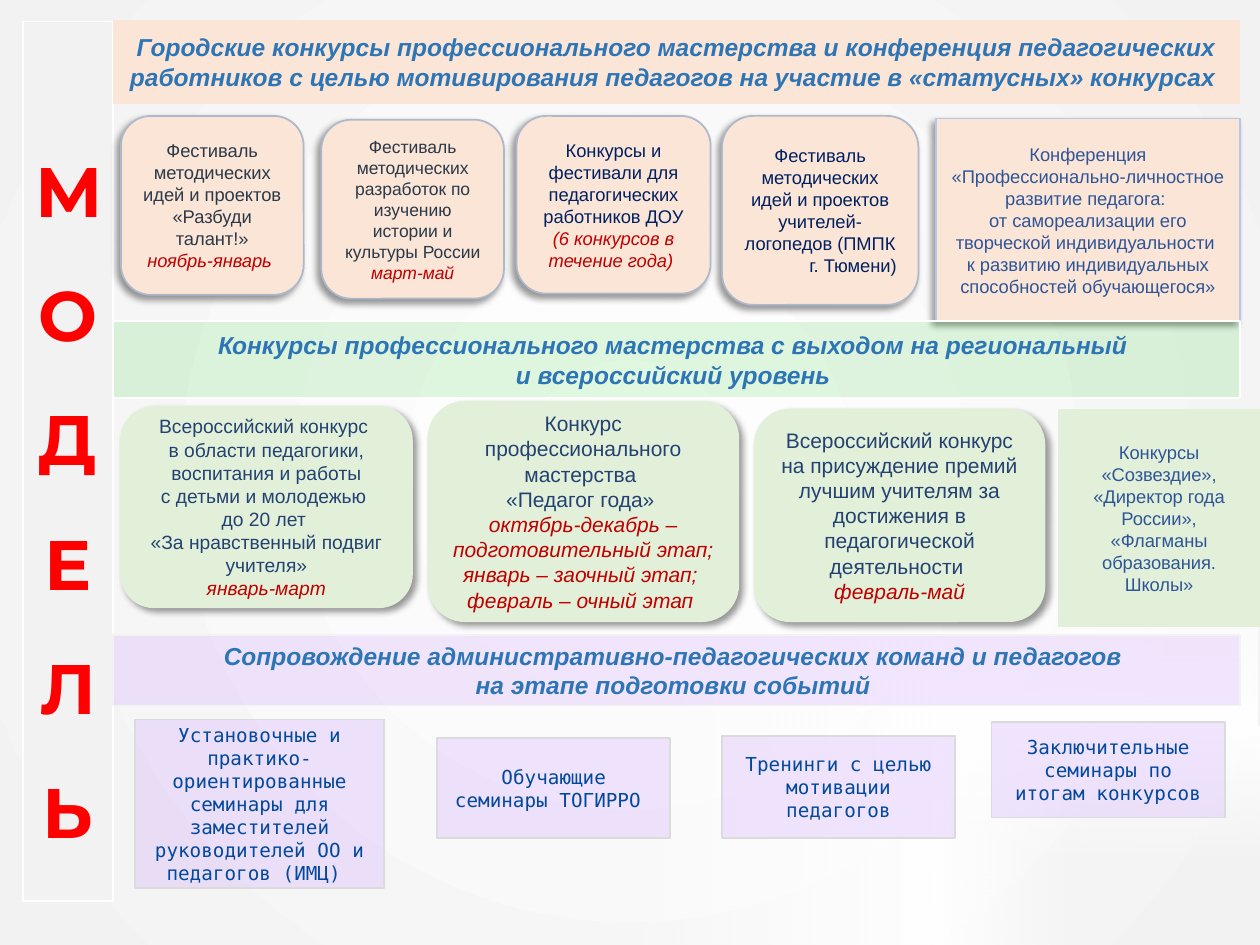
"""Build the slide with the model of professional contests for teachers."""
from lxml import etree
from pptx import Presentation
from pptx.dml.color import RGBColor
from pptx.enum import shapes, text
from pptx.oxml import parse_xml
from pptx.oxml.ns import nsdecls, qn
from pptx.util import Inches, Pt

color = RGBColor.from_string
RECTANGLE = shapes.MSO_SHAPE.RECTANGLE
ROUNDED = shapes.MSO_SHAPE.ROUNDED_RECTANGLE
PEACH, GREEN, LILAC, RED = "FBE5D6", "E2F0D9", "CC99FF", "C00000"


def add_box(kind, place, fill, line, width=1, opacity=100, shadow_angle=None):
    """Add a filled and outlined shape, optionally translucent or with a shadow."""
    shape = slide.shapes.add_shape(kind, *[Inches(value) for value in place])
    shape.shadow.inherit = False
    shape.fill.solid()
    shape.fill.fore_color.rgb = color(fill)
    shape.line.color.rgb = color(line)
    shape.line.width = Pt(width)
    properties = shape._element.spPr
    if opacity < 100:
        tint = properties.find(qn("a:solidFill"))[0]
        etree.SubElement(tint, qn("a:alpha"), val=str(opacity * 1000))
    if shadow_angle is not None:
        properties.find(qn("a:effectLst")).append(parse_xml(
            f'<a:outerShdw {nsdecls("a")} blurRad="50800" dist="38100" dir="{shadow_angle * 60000}" '
            'algn="ctr" rotWithShape="0"><a:srgbClr val="000000"><a:alpha val="40000"/>'
            '</a:srgbClr></a:outerShdw>'))
    return shape


def write(shape, lines, size, ink, font="Arial", bold=False, italic=False, dates=()):
    """Write centred paragraphs, followed by red italic dates."""
    frame = shape.text_frame
    frame.word_wrap = True
    frame.vertical_anchor = text.MSO_ANCHOR.MIDDLE
    frame.text = "\n".join([*lines, *dates])
    for index, paragraph in enumerate(frame.paragraphs):
        is_date = index >= len(lines)
        paragraph.alignment = text.PP_ALIGN.CENTER
        for run in paragraph.runs:
            run.font.name = font
            run.font.size = Pt(size)
            run.font.bold = bold
            run.font.italic = italic or is_date
            run.font.color.rgb = color(RED if is_date else ink)


presentation = Presentation()
presentation.slide_width = Inches(10)
presentation.slide_height = Inches(7.5)
slide = presentation.slides.add_slide(presentation.slide_layouts[6])

radial = '<a:path path="circle"><a:fillToRect l="50000" t="50000" r="50000" b="50000"/></a:path>'
linear = '<a:lin ang="5400000" scaled="0"/>'
backdrops = [
    ((0, 0, 10, 7.5), 0, "F2F2F2", 100, radial),
    ((7.11, 6.09, 1.72, 1.11), 270, "FFFFFF", 0, linear),
    ((7.42, 5.77, 2.58, 1.11), 0, "FFFFFF", 0, linear),
    ((7.4, 3.07, 2.58, 2.71), 180, "FFFFFF", 0, linear),
    ((4.83, 4.85, 2.58, 2.71), 90, "FFFFFF", 0, linear),
]
for place, rotation, end, opacity, direction in backdrops:
    backdrop = add_box(RECTANGLE, place, "FFFFFF", "FFFFFF")
    backdrop.rotation = rotation
    backdrop.line.fill.background()
    properties = backdrop._element.spPr
    properties.replace(properties.find(qn("a:solidFill")), parse_xml(
        f'<a:gradFill {nsdecls("a")} rotWithShape="1"><a:gsLst>'
        '<a:gs pos="0"><a:srgbClr val="FFFFFF"/></a:gs>'
        f'<a:gs pos="100000"><a:srgbClr val="{end}"><a:alpha val="{opacity * 1000}"/></a:srgbClr></a:gs>'
        f'</a:gsLst>{direction}</a:gradFill>'))

sidebar = add_box(RECTANGLE, (0.18, 0.17, 0.72, 6.98), "F2F2F2", "FFFFFF")
write(sidebar, "МОДЕЛЬ", 40, "FF0000", "Montserrat", bold=True)
sidebar.text_frame.vertical_anchor = text.MSO_ANCHOR.TOP
sidebar.text_frame.margin_top = Inches(1)
for paragraph in sidebar.text_frame.paragraphs[1:]:
    paragraph.space_before = Pt(23)

city_contests = [
    ((0.96, 0.92, 1.45, 1.42), 10.5, "2B3949",
     ["Фестиваль методических идей и проектов «Разбуди талант!»"], ["ноябрь-январь "]),
    ((2.55, 0.95, 1.45, 1.42), 10, "2B3949",
     ["Фестиваль методических разработок по изучению истории и культуры России"], ["март-май"]),
    ((4.1, 0.92, 1.54, 1.41), 10.5, "002060",
     ["Конкурсы и фестивали для педагогических работников ДОУ"], ["(6 конкурсов в течение года) "]),
    ((5.73, 0.92, 1.56, 1.5), 10.5, "002060",
     ["Фестиваль методических идей и проектов учителей-логопедов (ПМПК", "г. Тюмени)"], []),
]
for place, size, ink, lines, dates in city_contests:
    card = add_box(ROUNDED, place, PEACH, "ADB9CA", shadow_angle=135)
    write(card, lines, size, ink, dates=dates)
card.text_frame.paragraphs[-1].alignment = text.PP_ALIGN.RIGHT

conference = add_box(RECTANGLE, (7.43, 0.94, 2.41, 1.61), PEACH, "B4C7E7", shadow_angle=135)
write(conference, [
    "Конференция «Профессионально-личностное развитие педагога: ",
    "от самореализации его творческой индивидуальности ",
    "к развитию индивидуальных способностей обучающегося»"], 10.5, "2F5597")

national_contests = [
    ((0.96, 3.23, 2.31, 1.59), 11,
     ["Всероссийский конкурс ", "в области педагогики, воспитания и работы",
      "с детьми и молодежью ", "до 20 лет ", "«За нравственный подвиг учителя»"],
     ["январь-март"]),
    ((3.4, 3.19, 2.46, 1.74), 12,
     ["Конкурс профессионального мастерства ", "«Педагог года» "],
     ["октябрь-декабрь – подготовительный этап; ", "январь – заочный этап; ",
      "февраль – очный этап "]),
    ((5.99, 3.25, 2.3, 1.68), 12,
     ["Всероссийский конкурс на присуждение премий лучшим учителям "
      "за достижения в педагогической деятельности "],
     ["февраль-май"]),
]
for place, size, lines, dates in national_contests:
    card = add_box(ROUNDED, place, GREEN, GREEN, shadow_angle=45)
    write(card, lines, size, "234271", dates=dates)

other_contests = add_box(RECTANGLE, (8.4, 3.25, 1.6, 1.72), GREEN, GREEN, 0.5)
write(other_contests, [
    "Конкурсы «Созвездие»,",
    "«Директор года России», «Флагманы образования. Школы»"], 10.5, "2F5597")

bands = [
    (0.16, 0.66, PEACH, PEACH, 0.5, 100,
     ["Городские конкурсы профессионального мастерства и конференция педагогических "
      "работников с целью мотивирования педагогов на участие в «статусных» конкурсах "]),
    (2.55, 0.61, "33CC33", "FFFFFF", 1, 15,
     ["Конкурсы профессионального мастерства с выходом на региональный ",
      "и всероссийский уровень "]),
    (5.04, 0.56, LILAC, "F2F2F2", 1, 23,
     ["Сопровождение административно-педагогических команд и педагогов ",
      "на этапе подготовки событий "]),
]
for top, height, fill, line, width, opacity, lines in bands:
    band = add_box(RECTANGLE, (0.9, top, 8.94, height), fill, line, width, opacity)
    write(band, lines, 14, "2E75B6", bold=True, italic=True)

seminars = [
    ((1.07, 5.71, 1.98, 1.34), "Установочные и практико-ориентированные семинары "
     "для заместителей руководителей ОО и педагогов (ИМЦ) "),
    ((3.47, 5.86, 1.85, 0.79), "Обучающие семинары ТОГИРРО "),
    ((5.73, 5.84, 1.85, 0.81), "Тренинги с целью мотивации педагогов"),
    ((7.87, 5.73, 1.85, 0.76), "Заключительные семинары по итогам конкурсов"),
]
for place, line in seminars:
    seminar = add_box(RECTANGLE, place, LILAC, "DBDBDB", opacity=25)
    write(seminar, [line], 11, "02489D", "DejaVu Sans Mono")

presentation.save("out.pptx")
